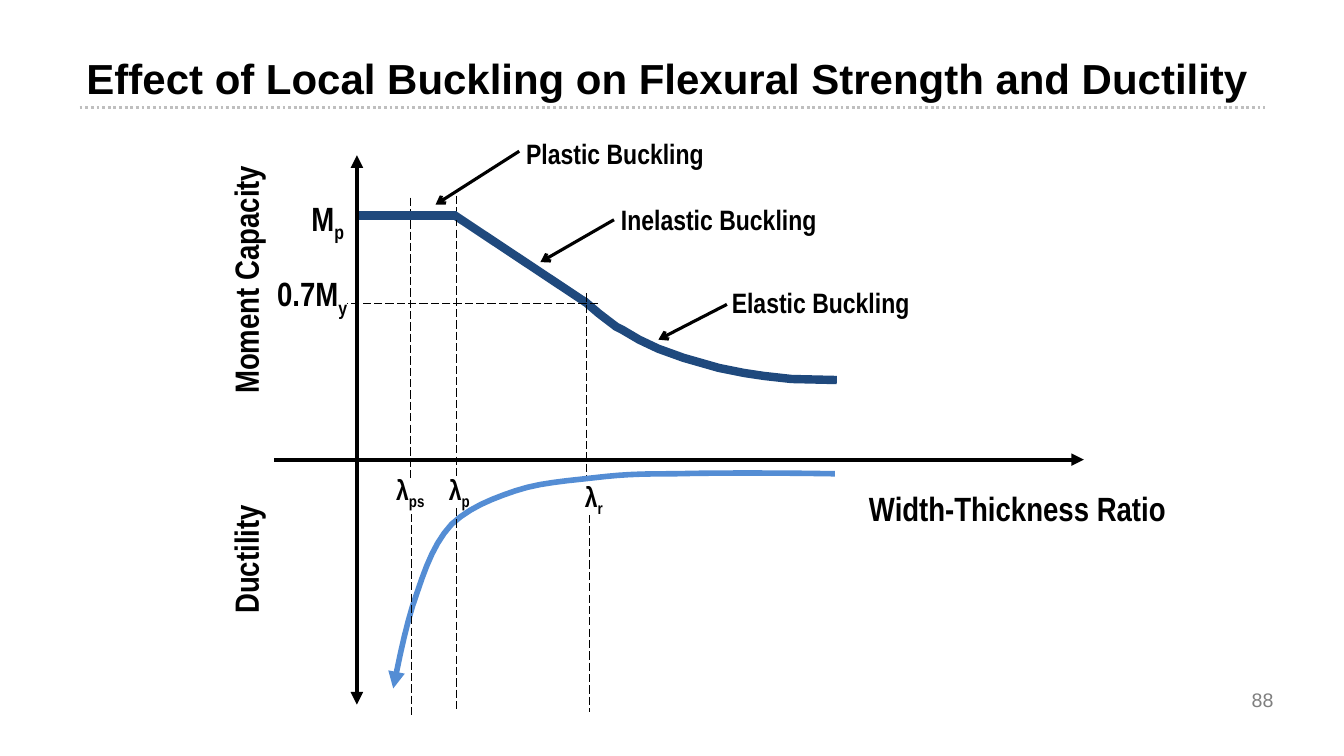
import lxml.etree
import pptx
import pptx.util
import pptx.dml.color
import pptx.enum.dml
import pptx.enum.shapes
import pptx.enum.text
import pptx.oxml.ns

Inches = pptx.util.Inches
Align = pptx.enum.text.PP_ALIGN
Dash = pptx.enum.dml.MSO_LINE
COLORS = {"ink": "000000", "navy": "1F497D", "sky": "548DD4",
          "rule": "BFBFBF", "gray": "7F7F7F"}


def paint(name):
    return pptx.dml.color.RGBColor.from_string(COLORS[name])


def attach(parent, tag):
    return lxml.etree.SubElement(parent, pptx.oxml.ns.qn(tag))


def style(shape, color, width, dash=None, head=None, tail=None):
    line = shape.line
    line.color.rgb = paint(color)
    line.width = pptx.util.Pt(width)
    if dash:
        line.dash_style = dash
    outline = line._get_or_add_ln()
    for tag, kind in (("a:headEnd", head), ("a:tailEnd", tail)):
        if kind:
            attach(outline, tag).set("type", kind)


def stroke(slide, box, start, stop, color="ink", width=0.75, **looks):
    x, y = box
    line = slide.shapes.add_connector(
        pptx.enum.shapes.MSO_CONNECTOR.STRAIGHT,
        Inches(x + start[0]), Inches(y + start[1]),
        Inches(x + stop[0]), Inches(y + stop[1]))
    style(line, color, width, **looks)
    attach(line._element.spPr, "a:effectLst")


def curve(slide, box, points, color, width, **looks):
    spots = [(Inches(box[0] + x), Inches(box[1] + y)) for x, y in points]
    pen = slide.shapes.build_freeform(*spots[0])
    pen.add_line_segments(spots[1:], close=False)
    shape = pen.convert_to_shape()
    shape.shadow.inherit = False
    shape.fill.background()
    style(shape, color, width, **looks)


def bend(nodes, steps=6):
    points = [nodes[0]]
    for i in range(0, len(nodes) - 1, 3):
        a, b, c, d = nodes[i:i + 4]
        for step in range(1, steps + 1):
            t = step / steps
            u = 1 - t
            points.append(tuple(
                u**3 * a[k] + 3 * u * u * t * b[k] + 3 * u * t * t * c[k] + t**3 * d[k]
                for k in (0, 1)))
    return points


def label(slide, box, place, text, size, sub="", align=Align.LEFT, turn=0,
          font="Arial Narrow", color="ink", bold=True):
    left, top, width, height = place
    shape = slide.shapes.add_textbox(
        Inches(box[0] + left), Inches(box[1] + top), Inches(width), Inches(height))
    shape.rotation = turn
    frame = shape.text_frame
    frame.word_wrap = True
    frame.text = text
    para = frame.paragraphs[0]
    para.alignment = align
    if sub:
        low = para.add_run()
        low.text = sub
        low._r.get_or_add_rPr().set("baseline", "-25000")
    for run in para.runs:
        run.font.name = font
        run.font.size = pptx.util.Pt(size)
        run.font.bold = bold
        run.font.color.rgb = paint(color)
    return shape


def header(slide, box):
    stroke(slide, box, (0.03, 0.6), (11.79, 0.6), "rule", 2, dash=Dash.ROUND_DOT)
    label(slide, box, (0, 0, 11.97, 0.68),
          "Effect of Local Buckling on Flexural Strength and Ductility", 30, font="Arial")


def footer(slide, box):
    page = label(slide, box, (0, 0, 3.11, 0.4), "88", 14, align=Align.RIGHT,
                 font="Arial", color="gray", bold=False)
    page.text_frame.vertical_anchor = pptx.enum.text.MSO_ANCHOR.MIDDLE


def moment(slide, box):
    label(slide, box, (0.65, 1.66, 0.99, 0.5), "0.7M", 24, "y")
    label(slide, box, (0.99, 0.91, 0.69, 0.5), "M", 24, "p")
    stroke(slide, box, (1.58, 1.12), (2.52, 1.12))
    stroke(slide, box, (2.5, 1.13), (3.81, 2), "navy", 6)
    curve(slide, box, [
        (3.8, 1.99), (3.94, 2.11), (4.11, 2.24), (4.17, 2.27), (4.34, 2.37),
        (4.53, 2.46), (4.78, 2.55), (5.13, 2.65), (5.38, 2.7), (5.58, 2.73),
        (5.85, 2.76), (6.3, 2.77)], "navy", 6)
    for x, top, low in ((2.53, 0.94, 3.74), (3.82, 1.91, 3.75), (2.07, 0.96, 3.76)):
        stroke(slide, box, (x, top), (x, low), dash=Dash.LONG_DASH)
    stroke(slide, box, (1.56, 1.14), (2.53, 1.14), "navy", 6)
    stroke(slide, box, (3.93, 2.01), (1.44, 2.01), dash=Dash.LONG_DASH)
    for name, x, y, start, stop in (
            ("Plastic", 3.12, 0.31, (3.15, 0.5), (2.32, 1.03)),
            ("Inelastic", 4.06, 0.96, (4.09, 1.18), (3.36, 1.6)),
            ("Elastic", 5.16, 1.78, (5.21, 2.02), (4.53, 2.37))):
        label(slide, box, (x, y, 2.6, 0.43), name + " Buckling", 20)
        stroke(slide, box, start, stop, width=2.25, tail="arrow")
    label(slide, box, (-0.99, 1.33, 2.85, 0.5), "Moment Capacity", 24, turn=270)


def ductile(slide, box):
    for sub, x, y, width in (("ps", 1.7, 0.14, 0.74), ("p", 2.3, 0.14, 0.51),
                             ("r", 3.42, 0.21, 0.94)):
        label(slide, box, (x, y, width, 0.43), "λ", 20, sub, Align.CENTER)
    label(slide, box, (-0.99, 0.8, 2.85, 0.5), "Ductility", 24,
          align=Align.CENTER, turn=270)
    curve(slide, box, bend([
        (6.28, 0.2), (5.68, 0.19), (5.09, 0.19), (4.69, 0.2),
        (4.29, 0.2), (4.15, 0.21), (3.89, 0.24),
        (3.63, 0.27), (3.34, 0.29), (3.11, 0.37),
        (2.87, 0.45), (2.65, 0.54), (2.48, 0.7),
        (2.32, 0.87), (2.23, 1.1), (2.14, 1.37),
        (2.04, 1.64), (1.97, 1.98), (1.9, 2.33)]), "sky", 4, tail="triangle")
    for x, top, low in ((2.53, 0.54, 2.55), (3.85, 0.61, 2.56), (2.08, 0.6, 2.59)):
        stroke(slide, box, (x, top), (x, low), dash=Dash.LONG_DASH)


def axes(slide, box):
    label(slide, box, (6.52, 3.79, 3.48, 0.5), "Width-Thickness Ratio", 24)
    stroke(slide, box, (0.72, 3.56), (8.75, 3.56), width=3, tail="triangle")
    stroke(slide, box, (1.54, 0.54), (1.54, 5.99), width=3,
           head="triangle", tail="triangle")


def main():
    deck = pptx.Presentation()
    deck.slide_width = Inches(13.33)
    deck.slide_height = Inches(7.5)
    slide = deck.slides.add_slide(deck.slide_layouts[6])
    header(slide, (0.76, 0.47))
    moment(slide, (2, 1))
    ductile(slide, (2, 4.5))
    axes(slide, (2, 1))
    footer(slide, (9.62, 6.74))
    deck.save("out.pptx")


if __name__ == "__main__":
    main()
